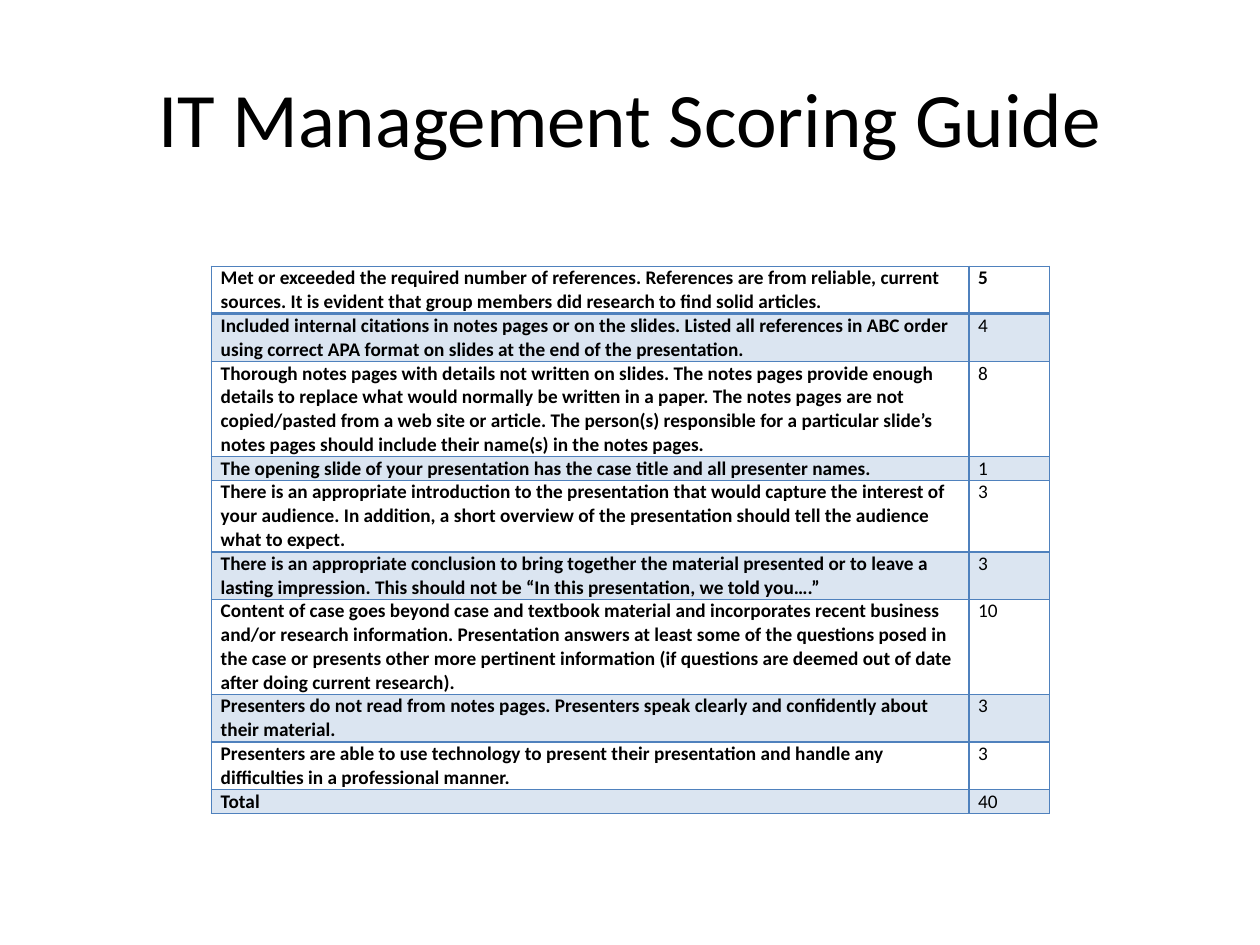
import pptx
import pptx.dml.color
import pptx.enum.text
import pptx.oxml
import pptx.oxml.ns
import pptx.util
from pptx.util import Cm, Pt

TITLE = "IT Management Scoring Guide"
# criterion, points, lines of text in the row
CRITERIA = [
    ("Met or exceeded the required number of references. References are from reliable, current "
     "sources. It is evident that group members did research to find solid articles.", 5, 2),
    ("Included internal citations in notes pages or on the slides. Listed all references in ABC "
     "order using correct APA format on slides at the end of the presentation.", 4, 2),
    ("Thorough notes pages with details not written on slides. The notes pages provide enough "
     "details to replace what would normally be written in a paper. The notes pages are not "
     "copied/pasted from a web site or article. The person(s) responsible for a particular "
     "slide’s notes pages should include their name(s) in the notes pages.", 8, 4),
    ("The opening slide of your presentation has the case title and all presenter names.", 1, 1),
    ("There is an appropriate introduction to the presentation that would capture the interest "
     "of your audience. In addition, a short overview of the presentation should tell the "
     "audience what to expect.", 3, 3),
    ("There is an appropriate conclusion to bring together the material presented or to leave a "
     "lasting impression. This should not be “In this presentation, we told you….”", 3, 2),
    ("Content of case goes beyond case and textbook material and incorporates recent business "
     "and/or research information. Presentation answers at least some of the questions posed in "
     "the case or presents other more pertinent information (if questions are deemed out of date "
     "after doing current research).", 10, 4),
    ("Presenters do not read from notes pages. Presenters speak clearly and confidently about "
     "their material.", 3, 2),
    ("Presenters are able to use technology to present their presentation and handle any "
     "difficulties in a professional manner.", 3, 2),
    ("Total", 40, 1),
]
FONT, BLUE, BLACK = "Calibri", "4F81BD", "000000"
COLUMNS = (15.27, 1.63)
LINE_HEIGHT = 0.47


def color(hex_text):
    return pptx.dml.color.RGBColor.from_string(hex_text)


def style_font(p, size, bold=False):
    p.font.name, p.font.size, p.font.bold = FONT, Pt(size), bold
    p.font.color.rgb = color(BLACK)


def add_borders(cell, widths):
    """Draw the cell's borders; widths maps L, R, T and B to points."""
    tc_pr = cell._tc.get_or_add_tcPr()
    for side, width in widths.items():
        tc_pr.append(pptx.oxml.parse_xml(
            f'<a:ln{side} {pptx.oxml.ns.nsdecls("a")} w="{Pt(width)}"><a:solidFill>'
            f'<a:srgbClr val="{BLUE}"/></a:solidFill></a:ln{side}>'))


def fill_band(cell):
    """Fill the cell with blue at 20% opacity."""
    cell.fill.solid()
    cell.fill.fore_color.rgb = color(BLUE)
    rgb = cell._tc.tcPr.find(".//" + pptx.oxml.ns.qn("a:solidFill") + "[last()]/"
                             + pptx.oxml.ns.qn("a:srgbClr"))
    fill = cell._tc.tcPr.findall(pptx.oxml.ns.qn("a:solidFill"))[0]
    rgb = fill[0]
    rgb.append(pptx.oxml.parse_xml(f'<a:alpha {pptx.oxml.ns.nsdecls("a")} val="20000"/>'))


def add_title(s):
    title = s.shapes.title
    title.left, title.top, title.width, title.height = Cm(1.27), Cm(0.76), Cm(22.86), Cm(3.18)
    tf = title.text_frame
    tf.text = TITLE
    tf.vertical_anchor = pptx.enum.text.MSO_ANCHOR.MIDDLE
    p = tf.paragraphs[0]
    p.alignment = pptx.enum.text.PP_ALIGN.CENTER
    style_font(p, 44)


def add_scoring_table(s):
    height = LINE_HEIGHT * sum(lines for _, _, lines in CRITERIA)
    table = s.shapes.add_table(len(CRITERIA), len(COLUMNS), Cm(4.26), Cm(5.37),
                               Cm(sum(COLUMNS)), Cm(height)).table
    table.first_row = table.horz_banding = False
    for column, width in zip(table.columns, COLUMNS):
        column.width = Cm(width)
    for i, (criterion, points, lines) in enumerate(CRITERIA):
        table.rows[i].height = Cm(LINE_HEIGHT * lines)
        for j, text in enumerate((criterion, str(points))):
            cell = table.cell(i, j)
            cell.text = text
            cell.margin_left = cell.margin_right = Cm(0.19)
            cell.margin_top = cell.margin_bottom = 0
            style_font(cell.text_frame.paragraphs[0], 11, bold=i == 0 or j == 0)
            add_borders(cell, {"L": 1, "R": 1, "T": 2 if i == 1 else 1, "B": 2 if i == 0 else 1})
            if i % 2:
                fill_band(cell)
            else:
                cell.fill.background()


def main():
    prs = pptx.Presentation()
    prs.slide_width, prs.slide_height = Cm(25.4), Cm(19.05)
    s = prs.slides.add_slide(prs.slide_layouts[5])
    add_title(s)
    add_scoring_table(s)
    prs.save("out.pptx")


if __name__ == "__main__":
    main()
